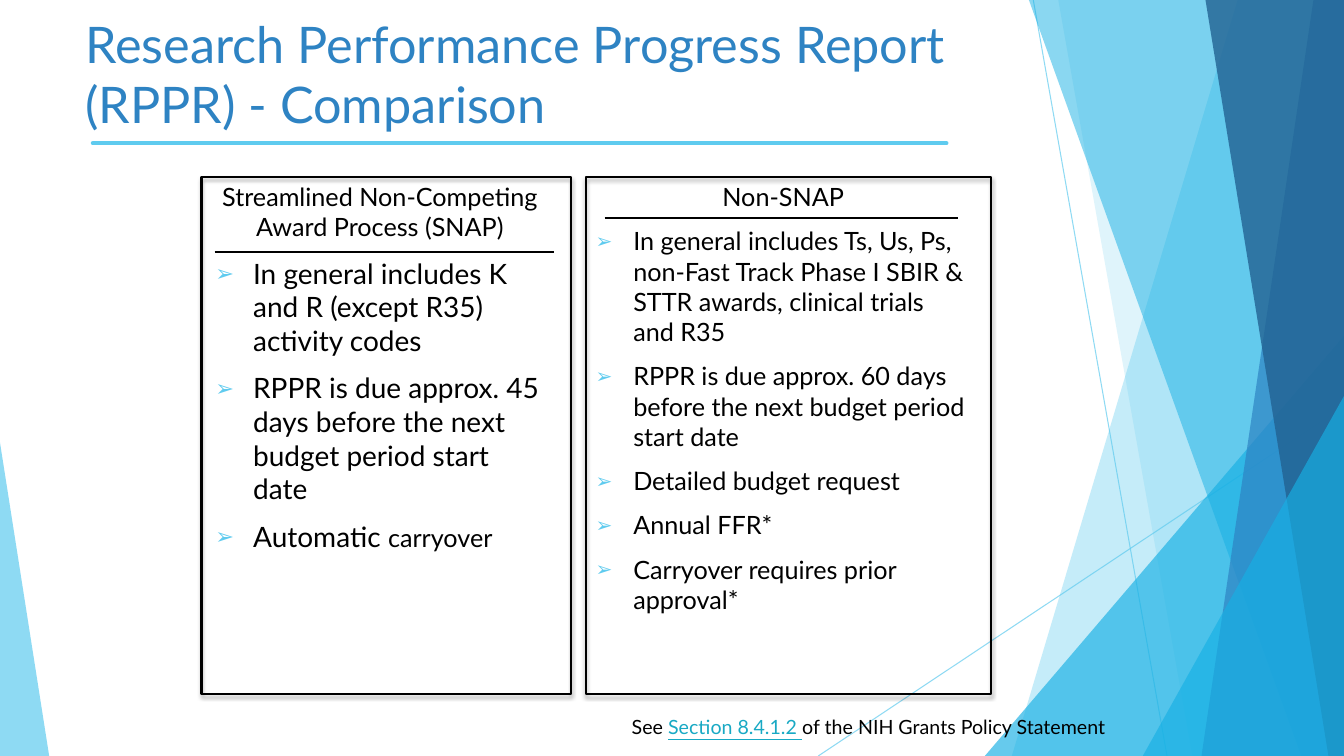
"""Build the RPPR comparison slide: SNAP beside Non-SNAP."""
import lxml.etree
import pptx
import pptx.dml.color
import pptx.enum.shapes
import pptx.enum.text
import pptx.oxml
import pptx.oxml.ns
import pptx.util

Cm = pptx.util.Cm
Pt = pptx.util.Pt
qn = pptx.oxml.ns.qn
SHAPE = pptx.enum.shapes.MSO_SHAPE
ANCHOR = pptx.enum.text.MSO_ANCHOR

FONT = "Lato"
WIDTH, HEIGHT = 33.87, 19.05
COLOURS = {
    "sky": "5FCBEF",
    "cyan": "17B0E4",
    "blue": "2E83C3",
    "navy": "226292",
    "link": "18A9C4",
    "black": "000000",
}
BANDS = [
    (31.19, 25.5, "sky", 36),
    (26.67, 30.05, "sky", 20),
    (25.93, 32.79, "cyan", 50),
    (33.1, 30.28, "blue", 70),
    (30.38, 33.48, "navy", 80),
]
SNAP = [
    [("In general includes K and R (except R35) activity codes", 20)],
    [("RPPR is due approx. 45 days before the next budget period start date", 20)],
    [("Automatic ", 20), ("carryover", 18)],
]
NON_SNAP = [
    [("In general includes Ts, Us, Ps, non-Fast Track Phase I SBIR & "
      "STTR awards, clinical trials and R35", 18)],
    [("RPPR is due approx. 60 days before the next budget period start date", 18)],
    [("Detailed budget request", 18)],
    [("Annual FFR*", 18)],
    [("Carryover requires prior approval*", 18)],
]


def rgb(name):
    return pptx.dml.color.RGBColor.from_string(COLOURS[name])


def add_xml(parent, tag, **attributes):
    names = {key: str(value) for key, value in attributes.items()}
    return lxml.etree.SubElement(parent, qn(tag), names)


def set_alpha(fill, percent):
    add_xml(fill.find(".//" + qn("a:srgbClr")), "a:alpha", val=percent * 1000)


def style_fill(shape, colour, alpha):
    shape.shadow.inherit = False
    shape.fill.solid()
    shape.fill.fore_color.rgb = rgb(colour)
    set_alpha(shape._element.spPr.find(qn("a:solidFill")), alpha)
    shape.line.fill.background()


def add_line(page, start, end, colour, width, alpha=100, cap="flat"):
    line = page.shapes.add_connector(
        pptx.enum.shapes.MSO_CONNECTOR.STRAIGHT, *map(Cm, start + end))
    line.line.color.rgb = rgb(colour)
    line.line.width = Pt(width)
    outline = line._element.spPr.find(qn("a:ln"))
    outline.set("cap", cap)
    if alpha < 100:
        set_alpha(outline, alpha)
    add_xml(line._element.spPr, "a:effectLst")


def add_band(page, top, bottom, colour, alpha):
    builder = page.shapes.build_freeform(Cm(top), 0, scale=1.0)
    corners = [(WIDTH, 0), (WIDTH, HEIGHT), (bottom, HEIGHT)]
    builder.add_line_segments([(Cm(x), Cm(y)) for x, y in corners], close=True)
    style_fill(builder.convert_to_shape(), colour, alpha)


def add_triangle(page, area, apex, colour, alpha):
    triangle = page.shapes.add_shape(SHAPE.ISOSCELES_TRIANGLE, *map(Cm, area))
    triangle.adjustments[0] = apex
    style_fill(triangle, colour, alpha)


def add_frame(page, area):
    frame = page.shapes.add_shape(SHAPE.RECTANGLE, *map(Cm, area))
    frame.shadow.inherit = False
    frame.fill.background()
    frame.line.color.rgb = rgb("black")
    frame.line.width = Pt(1.5)
    effects = frame._element.spPr.find(qn("a:effectLst"))
    shadow = add_xml(effects, "a:outerShdw", blurRad=Pt(3), dist=Pt(2),
                     dir=90 * 60000, rotWithShape=0)
    colour = add_xml(shadow, "a:srgbClr", val=COLOURS["black"])
    add_xml(colour, "a:alpha", val=35000)


def add_box(page, area, anchor=ANCHOR.TOP):
    box = page.shapes.add_textbox(*map(Cm, area))
    box.text_frame.word_wrap = True
    box.text_frame.vertical_anchor = anchor
    return box.text_frame


def set_font(font, size, colour="black"):
    font.name = FONT
    font.size = Pt(size)
    font.color.rgb = rgb(colour)


def add_bullet(para):
    properties = para._p.get_or_add_pPr()
    properties.set("marL", str(Cm(0.95)))
    properties.set("indent", str(Cm(-0.95)))
    colour = add_xml(properties, "a:buClr")
    add_xml(colour, "a:srgbClr", val=COLOURS["sky"])
    add_xml(properties, "a:buSzPct", val=80000)
    add_xml(properties, "a:buFont", typeface=FONT)
    add_xml(properties, "a:buChar", char="➢")


def add_column(page, area, heading, bullets):
    frame = add_box(page, area)
    para = frame.paragraphs[0]
    para.text = heading
    para.alignment = pptx.enum.text.PP_ALIGN.CENTER
    set_font(para.font, 18)
    for parts in bullets:
        para = frame.add_paragraph()
        add_bullet(para)
        para.space_before = Pt(10)
        if len(parts) == 1:
            para.text, size = parts[0]
            set_font(para.font, size)
            continue
        for text, size in parts:
            span = para.add_run()
            span.text = text
            set_font(span.font, size)


def add_title(page):
    frame = add_box(page, (1.9, 0.15, 23.93, 3.39), ANCHOR.MIDDLE)
    para = frame.paragraphs[0]
    para.text = "Research Performance Progress Report (RPPR) - Comparison"
    set_font(para.font, 36, "blue")


def add_reference(page):
    para = add_box(page, (15.67, 17.9, 12.98, 0.86)).paragraphs[0]
    for text, colour in [("See ", "black"), ("Section 8.4.1.2 ", "link"),
                         ("of the NIH Grants Policy Statement", "black")]:
        span = para.add_run()
        span.text = text
        set_font(span.font, 14, colour)
        span.font.underline = colour == "link"


def add_backdrop(page):
    add_line(page, (26.04, 0), (29.41, HEIGHT), "sky", 0.75, 70)
    add_line(page, (WIDTH, 10.24), (20.62, HEIGHT), "sky", 0.75, 70)
    for band in BANDS[:2]:
        add_band(page, *band)
    add_triangle(page, (24.82, 8.46, 9.05, 10.59), 1, "cyan", 66)
    for band in BANDS[2:]:
        add_band(page, *band)
    add_triangle(page, (28.8, 9.98, 5.07, 9.07), 1, "cyan", 66)
    add_triangle(page, (0, 11.15, 1.24, 7.9), 0, "sky", 70)
    add_line(page, (2.34, 3.61), (23.85, 3.61), "sky", 3, cap="rnd")


def main():
    deck = pptx.Presentation()
    deck.slide_width, deck.slide_height = Cm(WIDTH), Cm(HEIGHT)
    page = deck.slides.add_slide(deck.slide_layouts[6])
    add_backdrop(page)
    add_title(page)
    add_column(page, (5.18, 4.45, 8.79, 13.03),
               "Streamlined Non-Competing Award Process (SNAP)", SNAP)
    add_column(page, (14.76, 4.45, 9.96, 13.03), "Non-SNAP", NON_SNAP)
    add_line(page, (5.41, 6.35), (13.97, 6.35), "black", 1.5)
    add_line(page, (15.24, 5.5), (24.13, 5.5), "black", 1.5)
    add_frame(page, (5.08, 4.45, 9.32, 13.03))
    add_frame(page, (14.76, 4.45, 10.21, 13.03))
    add_reference(page)
    deck.save("out.pptx")


if __name__ == "__main__":
    main()
